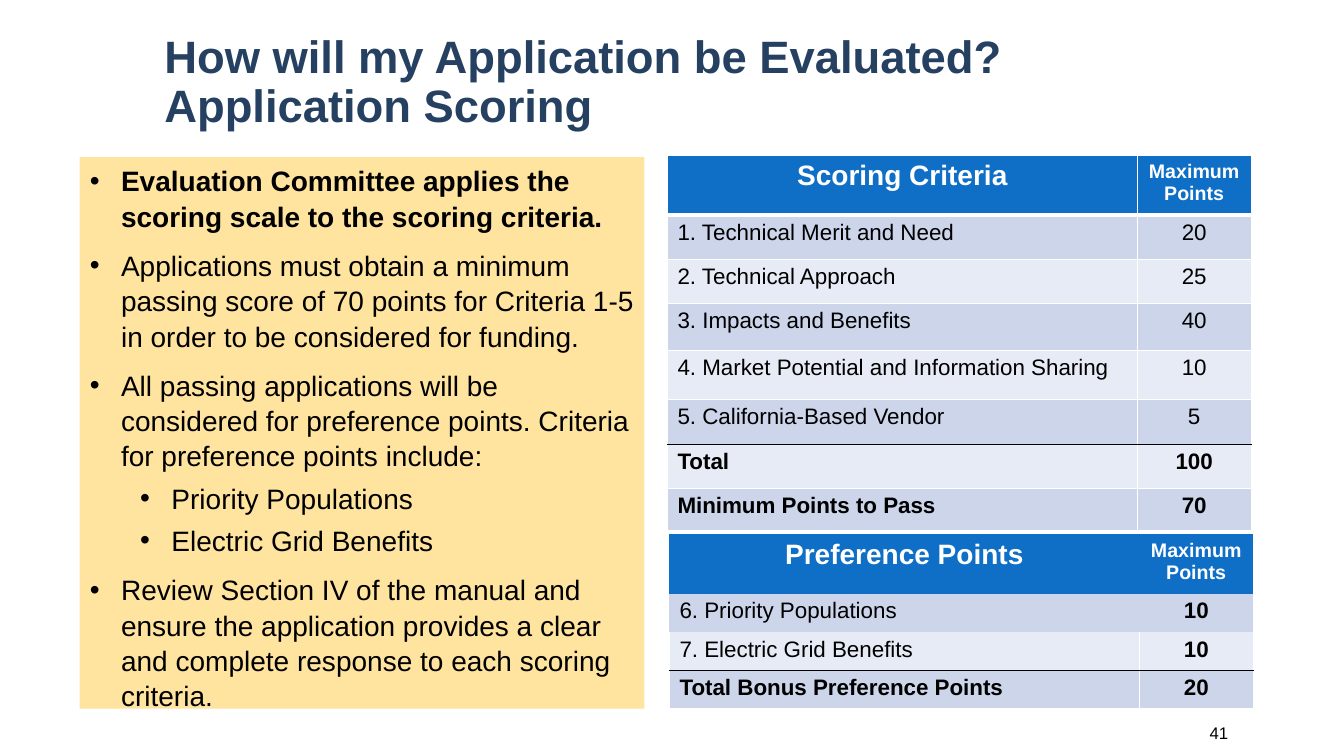
from dataclasses import dataclass

from lxml import etree
from pptx import Presentation
from pptx import util as u
from pptx.dml.color import RGBColor
from pptx.enum import text
from pptx.oxml import ns


@dataclass(frozen=True)
class Theme:
    font: str = "Arial"
    navy: str = "254061"
    black: str = "000000"
    white: str = "FFFFFF"
    sand: str = "FFE49F"
    blue: str = "0F6FC6"
    bands: tuple = ("CCD5EA", "E7EBF5")
    title: float = 32.4
    body: float = 20
    points_header: float = 14
    cell: float = 16
    number: float = 12


THEME = Theme()
WIDTH, HEIGHT = u.Inches(13.33), u.Inches(7.5)
THIN, THICK = (THEME.white, 1), (THEME.white, 3)
RULE = (THEME.black, 1)


def box(left, top, width, height):
    """Turn percentages of the slide into lengths."""
    return [u.Emu(round(share * side / 100))
            for share, side in zip((left, top, width, height), (WIDTH, HEIGHT) * 2)]


def place(shape, area):
    shape.left, shape.top, shape.width, shape.height = area


def add_run(paragraph, words, size, color, bold=False):
    run = paragraph.add_run()
    run.text = words
    run.font.name = THEME.font
    run.font.size = u.Pt(size)
    run.font.bold = bold
    run.font.color.rgb = RGBColor.from_string(color)


def add_bullet(paragraph, level):
    properties = paragraph._p.get_or_add_pPr()
    properties.set("marL", str(u.Inches(0.31 + 0.5 * level)))
    properties.set("indent", str(u.Inches(-0.31)))
    etree.SubElement(properties, ns.qn("a:buFont"), typeface=THEME.font)
    etree.SubElement(properties, ns.qn("a:buChar"), char="•")


def fill_title(title, area, lines):
    place(title, area)
    frame = title.text_frame
    frame.auto_size = text.MSO_AUTO_SIZE.NONE
    frame.vertical_anchor = text.MSO_ANCHOR.MIDDLE
    paragraph = frame.paragraphs[0]
    paragraph.alignment = text.PP_ALIGN.LEFT
    paragraph.line_spacing = 0.9
    for index, line in enumerate(lines):
        if index:
            paragraph.add_line_break()
        add_run(paragraph, line, THEME.title, THEME.navy, True)


def fill_body(body, area, items):
    """Write (level, words, bold) items as bullets on a coloured panel."""
    place(body, area)
    body.fill.solid()
    body.fill.fore_color.rgb = RGBColor.from_string(THEME.sand)
    frame = body.text_frame
    frame.auto_size = text.MSO_AUTO_SIZE.NONE
    for index, (level, words, bold) in enumerate(items):
        paragraph = frame.add_paragraph() if index else frame.paragraphs[0]
        paragraph.level = level
        add_bullet(paragraph, level)
        paragraph.line_spacing = 1.05
        paragraph.space_before = u.Pt((5 if level else 10) if index else 0)
        add_run(paragraph, words, THEME.body, THEME.black, bold)


def set_borders(cell, **sides):
    """Draw each side given as (colour, points), or leave it open for None."""
    properties = cell._tc.get_or_add_tcPr()
    for position, side in enumerate("LRTB"):
        stroke = sides[side]
        line = etree.Element(ns.qn(f"a:ln{side}"))
        properties.insert(position, line)
        if stroke is None:
            etree.SubElement(line, ns.qn("a:noFill"))
            continue
        color, points = stroke
        line.set("w", str(u.Pt(points)))
        fill = etree.SubElement(line, ns.qn("a:solidFill"))
        etree.SubElement(fill, ns.qn("a:srgbClr"), val=color)


def add_score_table(slide, area, heading, rows, heights, rules, first_divided):
    """Rows are (label, points, label bold, points bold); rules run from top to bottom."""
    left, top, width, height = area
    table = slide.shapes.add_table(len(heights), 2, *area).table
    table.first_row = table.horz_banding = False
    table.columns[0].width = round(width * 0.805)
    table.columns[1].width = width - table.columns[0].width
    header = (heading, "Maximum Points", True, True)
    for index, (label, points, *weights) in enumerate([header, *rows]):
        table.rows[index].height = round(height * heights[index] / sum(heights))
        sizes = (THEME.cell, THEME.cell) if index else (THEME.body, THEME.points_header)
        fill = THEME.bands[(index - 1) % 2] if index else THEME.blue
        side = THIN if index >= first_divided else None
        for column, words in enumerate((label, points)):
            cell = table.cell(index, column)
            cell.fill.solid()
            cell.fill.fore_color.rgb = RGBColor.from_string(fill)
            set_borders(cell, L=side, R=side, T=rules[index], B=rules[index + 1])
            paragraph = cell.text_frame.paragraphs[0]
            centred = column or not index
            paragraph.alignment = text.PP_ALIGN.CENTER if centred else text.PP_ALIGN.LEFT
            add_run(paragraph, words, sizes[column],
                    THEME.black if index else THEME.white, weights[column])


def add_page_number(slide, area, number):
    frame = slide.shapes.add_textbox(*area).text_frame
    frame.word_wrap = True
    frame.vertical_anchor = text.MSO_ANCHOR.MIDDLE
    paragraph = frame.paragraphs[0]
    paragraph.alignment = text.PP_ALIGN.RIGHT
    add_run(paragraph, number, THEME.number, THEME.black)


def build_scoring_slide(presentation):
    slide = presentation.slides.add_slide(presentation.slide_layouts[1])
    fill_title(slide.shapes.title, box(11.48, 3.47, 81.7, 15.2),
               ["How will my Application be Evaluated?", "Application Scoring"])
    fill_body(slide.placeholders[1], box(5.93, 20.8, 42.01, 72.93), [
        (0, "Evaluation Committee applies the scoring scale to the scoring criteria.", True),
        (0, "Applications must obtain a minimum passing score of 70 points for "
            "Criteria 1-5 in order to be considered for funding.", False),
        (0, "All passing applications will be considered for preference points. "
            "Criteria for preference points include:", False),
        (1, "Priority Populations", False),
        (1, "Electric Grid Benefits", False),
        (0, "Review Section IV of the manual and ensure the application provides a "
            "clear and complete response to each scoring criteria.", False),
    ])
    add_score_table(slide, box(49.66, 20.53, 43.43, 49.73), "Scoring Criteria", [
        ("1. Technical Merit and Need", "20", False, False),
        ("2. Technical Approach", "25", False, False),
        ("3. Impacts and Benefits", "40", False, False),
        ("4. Market Potential and Information Sharing", "10", False, False),
        ("5. California-Based Vendor", "5", False, False),
        ("Total", "100", True, True),
        ("Minimum Points to Pass", "70", True, True),
    ], heights=[59, 44, 44, 46, 49, 44, 44, 42],
        rules=[THIN, THICK, *[THIN] * 4, RULE, THIN, THIN], first_divided=0)
    add_score_table(slide, box(49.81, 70.67, 43.43, 23.07), "Preference Points", [
        ("6. Priority Populations", "10", False, True),
        ("7. Electric Grid Benefits", "10", False, True),
        ("Total Bonus Preference Points", "20", True, True),
    ], heights=[59, 38, 38, 38],
        rules=[None, None, None, RULE, THIN], first_divided=2)
    add_page_number(slide, box(77.64, 94.27, 14.48, 5.33), "41")


def main():
    presentation = Presentation()
    presentation.slide_width, presentation.slide_height = WIDTH, HEIGHT
    build_scoring_slide(presentation)
    presentation.save("out.pptx")


if __name__ == "__main__":
    main()
